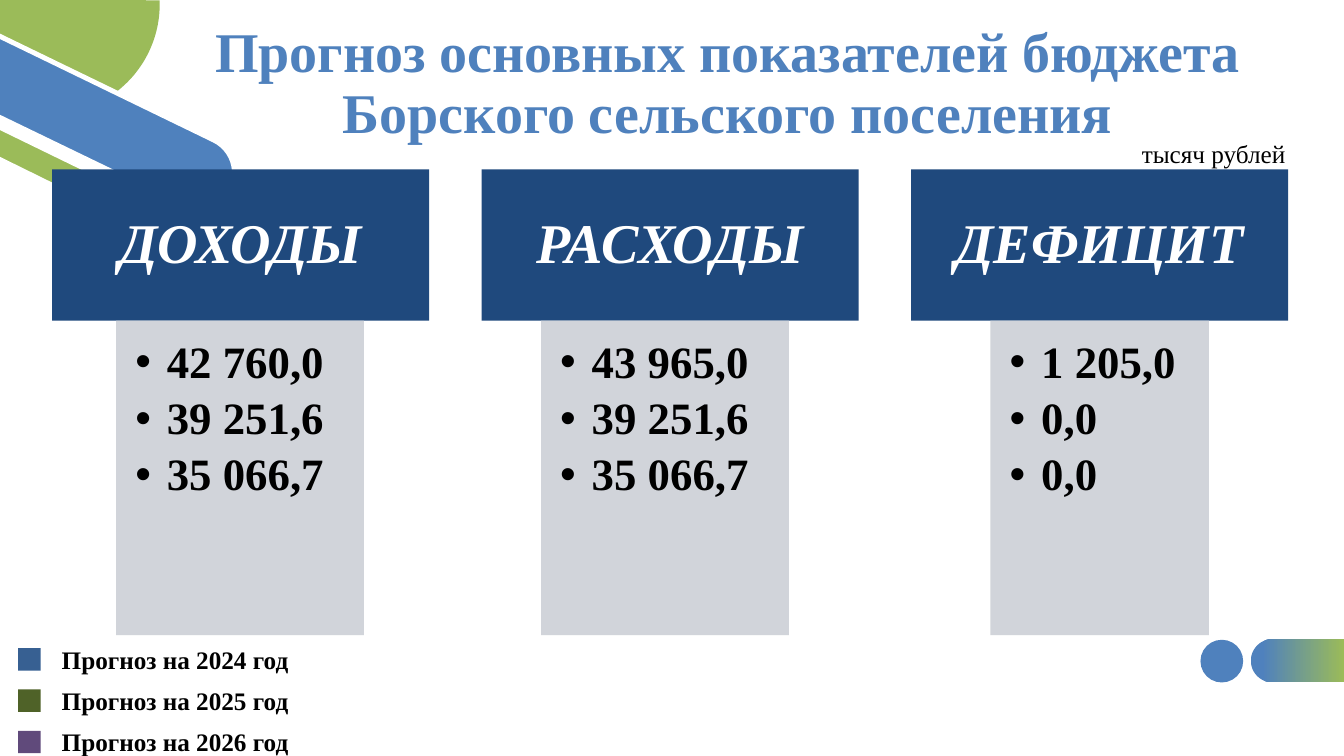
from math import cos, radians, sin

from lxml.etree import SubElement
from pptx import Presentation
from pptx.dml.color import RGBColor
from pptx.enum.shapes import MSO_SHAPE
from pptx.enum.text import MSO_ANCHOR, PP_ALIGN
from pptx.oxml.ns import qn
from pptx.util import Pt

BLUE, GREEN, WHITE, BLACK, NAVY, GREY = "4F81BD", "9BBB59", "FFFFFF", "000000", "1F497D", "CDD0D7"

deck = Presentation()
deck.slide_width, deck.slide_height = Pt(960), Pt(540)
page = deck.slides.add_slide(deck.slide_layouts[5])


def paint(shape, colour):
    """Give a shape a plain fill with no line or shadow."""
    shape.shadow.inherit = False
    shape.line.fill.background()
    shape.fill.solid()
    shape.fill.fore_color.rgb = RGBColor.from_string(colour)


def write(box, lines, size, colour, bold=False, italic=False, align=PP_ALIGN.LEFT):
    box.text_frame.word_wrap = True
    box.text_frame.text = "\n".join(lines)
    for para in box.text_frame.paragraphs:
        para.alignment = align
        font = para.runs[0].font
        font.name, font.size = "Times New Roman", Pt(size)
        font.bold, font.italic = bold, italic
        font.color.rgb = RGBColor.from_string(colour)


# Ornaments: straight corners, then an arc (centre, radius, first and last angle)
ornaments = [
    (GREEN, [(0, 24.5), (0, 0)], (35.3, 3, 78.8, -2, 52)),
    (GREEN, [(-2, 113), (-2, 90)], (71.5, 137.5, 10.5, -64, 116)),
    (BLUE, [(-2, 83), (-2, 25)], (141.5, 123.5, 26, -64, 116)),
    (BLUE, [(960, 456.5), (960, 487.5)], (909, 472, 15.5, 90, 270)),
]
for colour, corners, (centre_x, centre_y, radius, first, last) in ornaments:
    angles = [radians(first + (last - first) * step / 24) for step in range(25)]
    arc = [(centre_x + radius * cos(angle), centre_y + radius * sin(angle)) for angle in angles]
    outline = [(Pt(x), Pt(y)) for x, y in corners + arc]
    builder = page.shapes.build_freeform(*outline[0], scale=1.0)
    builder.add_line_segments(outline[1:], close=True)
    ornament = builder.convert_to_shape()
    paint(ornament, colour)
    if corners[0][0] < 0:
        ornament.line.color.rgb = RGBColor.from_string(WHITE)
        ornament.line.width = Pt(3.5)

# The last ornament is the pill at the bottom right
ornament.fill.gradient()
ornament.fill.gradient_angle = 0
for stop, position, colour in zip(ornament.fill.gradient_stops, (0.12, 1), (BLUE, GREEN)):
    stop.position = position
    stop.color.rgb = RGBColor.from_string(colour)
dot = page.shapes.add_shape(MSO_SHAPE.OVAL, Pt(857.5), Pt(457), Pt(30.5), Pt(30.5))
paint(dot, BLUE)

# Title
title = page.shapes.title
title.left, title.top, title.width, title.height = Pt(79), Pt(13.7), Pt(881), Pt(104.4)
write(title, ["Прогноз основных показателей бюджета", "Борского сельского поселения"],
      40, BLUE, bold=True, align=PP_ALIGN.CENTER)
title.text_frame.vertical_anchor = MSO_ANCHOR.TOP
for para in title.text_frame.paragraphs:
    para.line_spacing = 0.9
    para.space_before = Pt(0)

# Budget columns: heading, left and width of the panel, values by year
columns = [
    ("ДОХОДЫ", 83, 177, ["42 760,0", "39 251,6", "35 066,7"]),
    ("РАСХОДЫ", 386.5, 177, ["43 965,0", "39 251,6", "35 066,7"]),
    ("ДЕФИЦИТ", 707.5, 156, ["1 205,0", "0,0", "0,0"]),
]
for index, (heading, panel_left, panel_width, values) in enumerate(columns):
    header = page.shapes.add_shape(MSO_SHAPE.RECTANGLE, Pt(37.3 + 306.8 * index), Pt(121),
                                   Pt(269.3), Pt(108))
    paint(header, NAVY)
    write(header, [heading], 40, WHITE, bold=True, italic=True, align=PP_ALIGN.CENTER)
    header.text_frame.vertical_anchor = MSO_ANCHOR.MIDDLE
    header.text_frame.paragraphs[0].line_spacing = 0.9

    panel = page.shapes.add_shape(MSO_SHAPE.RECTANGLE, Pt(panel_left), Pt(229),
                                  Pt(panel_width), Pt(224.6))
    paint(panel, GREY)
    fill_colour = panel.element.spPr.find(qn("a:solidFill"))[0]
    SubElement(fill_colour, qn("a:alpha"), val="90000")
    write(panel, values, 32, BLACK, bold=True)
    frame = panel.text_frame
    frame.vertical_anchor = MSO_ANCHOR.TOP
    frame.margin_left = frame.margin_top = Pt(13.7)
    for para in frame.paragraphs:
        para.line_spacing = 0.9
        para.space_after = Pt(5.5)
        properties = para._p.get_or_add_pPr()
        properties.set("marL", str(int(Pt(22.5))))
        properties.set("indent", str(-int(Pt(22.5))))
        SubElement(properties, qn("a:buFont"), typeface="Arial")
        SubElement(properties, qn("a:buChar"), char="•")

unit = page.shapes.add_textbox(Pt(808.5), Pt(95), Pt(134.5), Pt(29))
write(unit, ["тысяч рублей"], 18, BLACK)

# Legend
for index, colour in enumerate(["376092", "4F6228", "604A7B"]):
    key = page.shapes.add_shape(MSO_SHAPE.RECTANGLE, Pt(13), Pt(463 + 29.5 * index),
                                Pt(16), Pt(16))
    paint(key, colour)
    label = page.shapes.add_textbox(Pt(37), Pt(456.7 + 29.2 * index), Pt(214), Pt(24.9))
    write(label, [f"Прогноз на {2024 + index} год"], 18, BLACK, bold=True)

deck.save("out.pptx")
